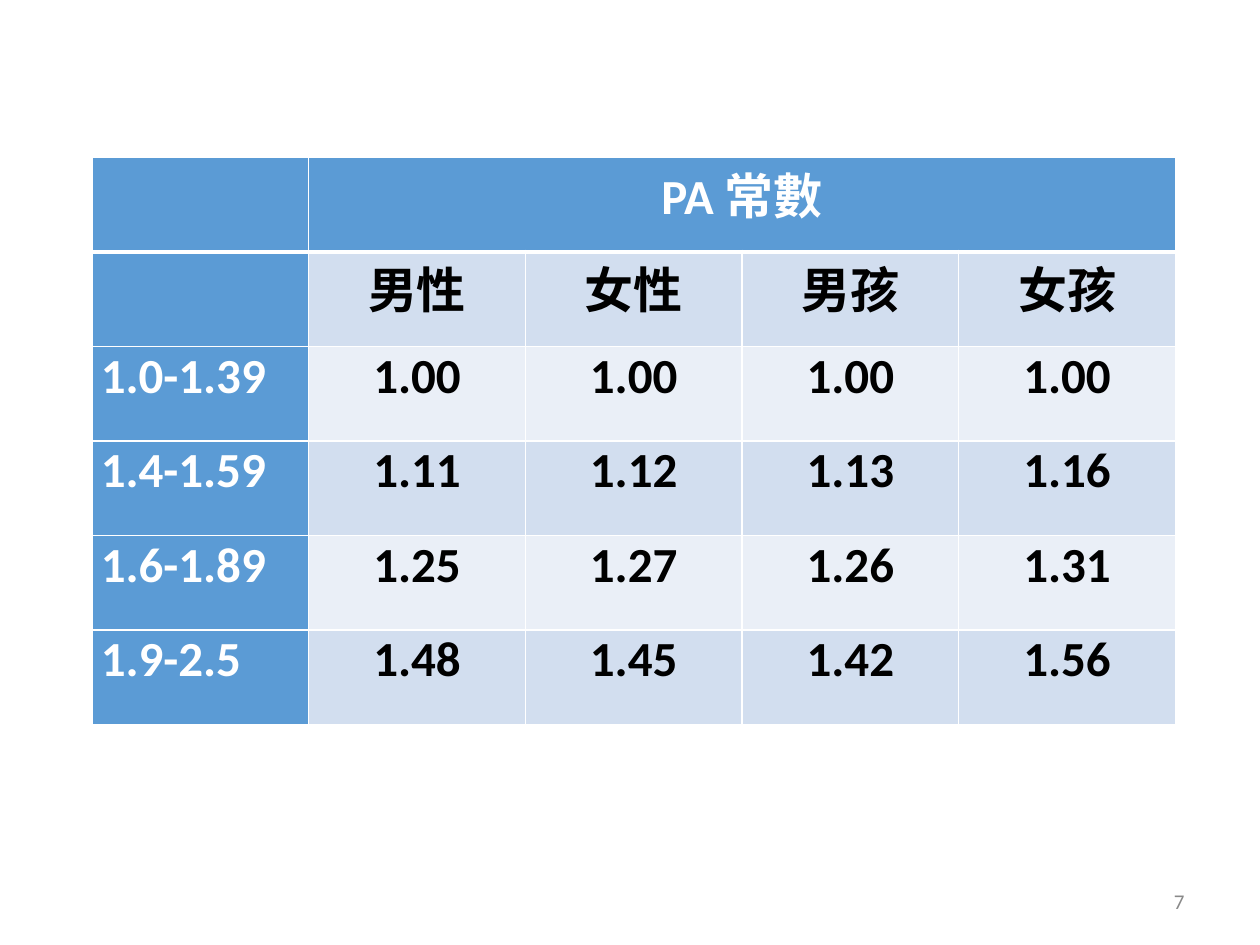
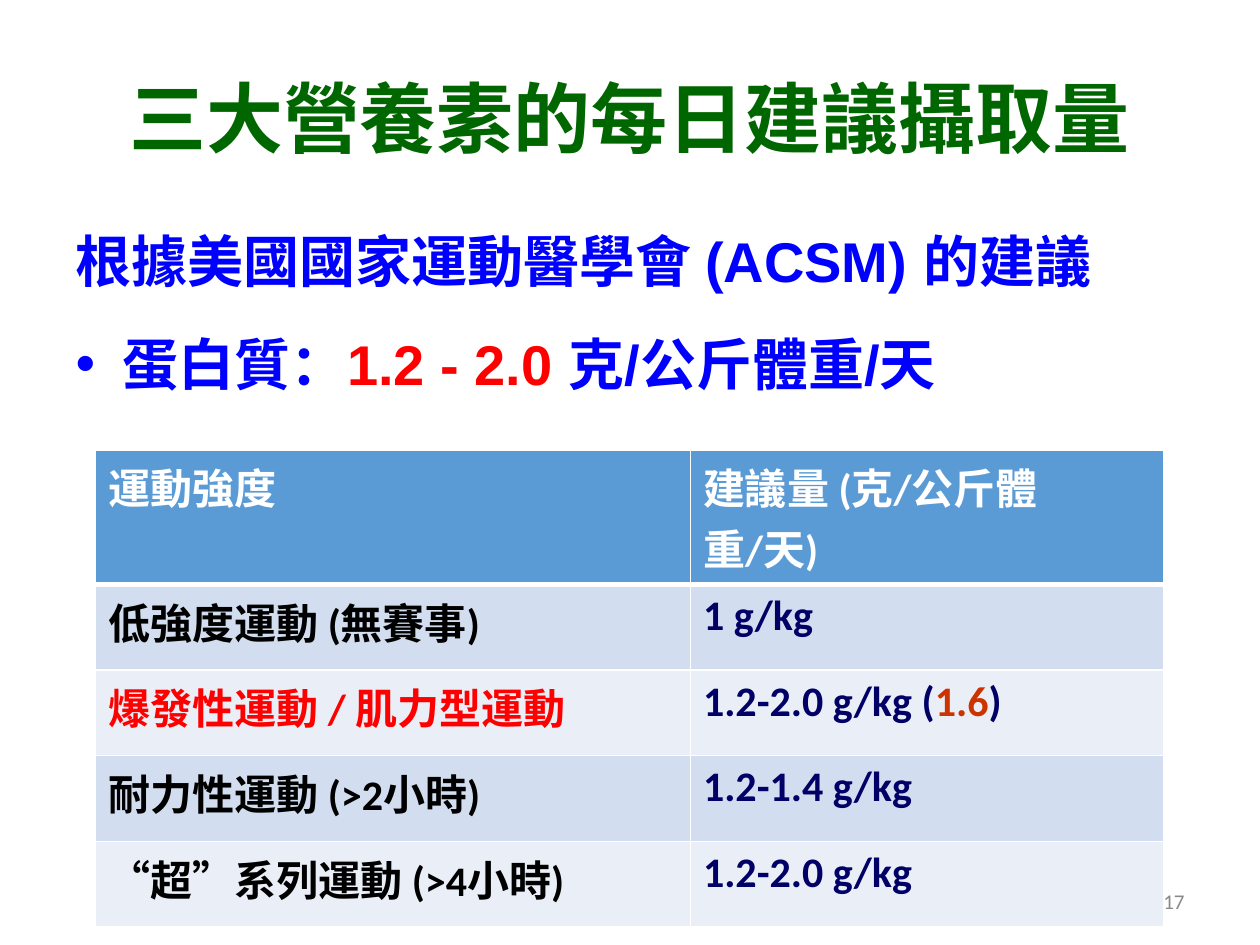
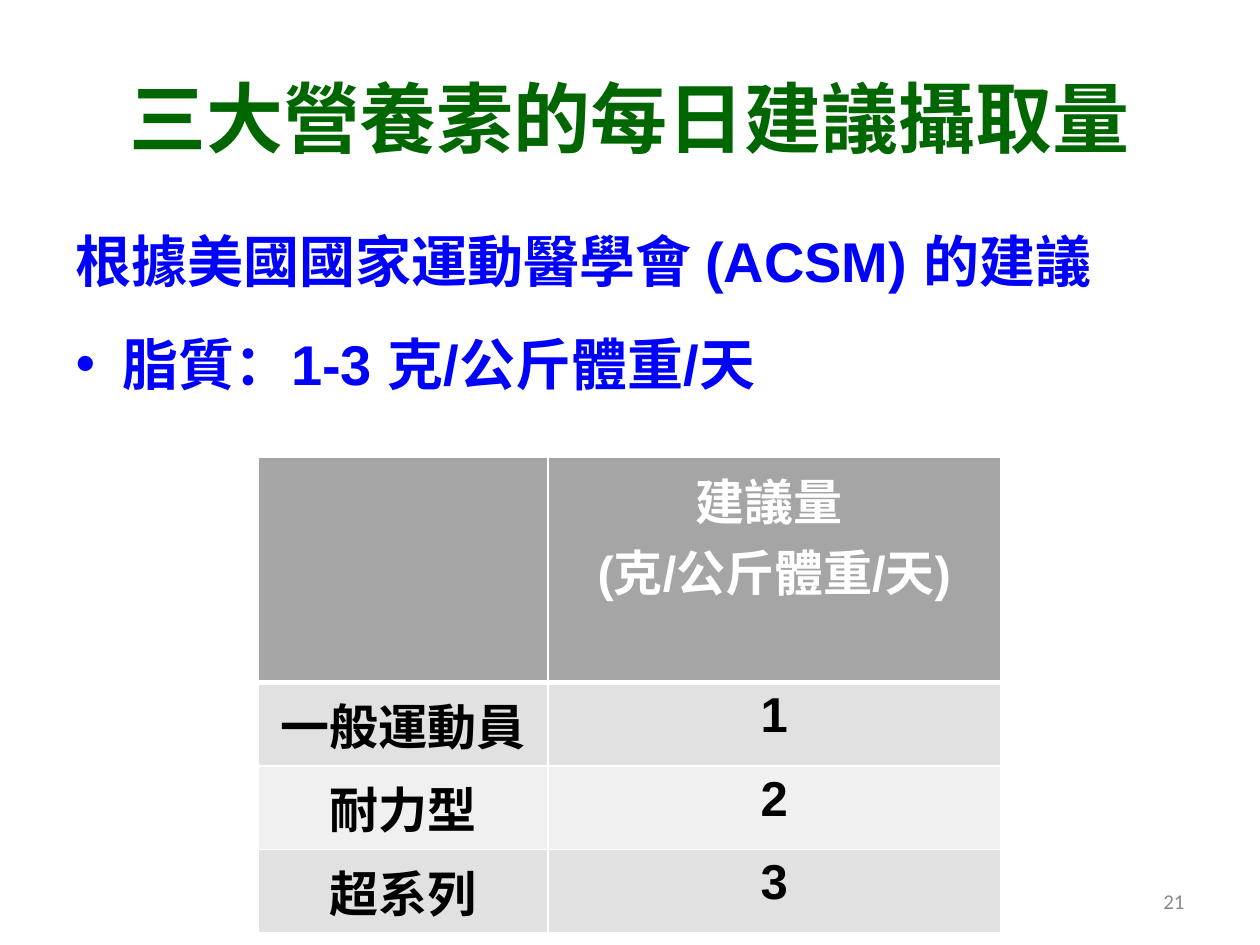
from dataclasses import dataclass, replace

from lxml import etree
from pptx import Presentation
from pptx.dml.color import RGBColor
from pptx.enum.text import MSO_ANCHOR, MSO_AUTO_SIZE, PP_ALIGN
from pptx.oxml.ns import qn
from pptx.util import Inches, Pt

LEFT, CENTER, RIGHT = PP_ALIGN.LEFT, PP_ALIGN.CENTER, PP_ALIGN.RIGHT
TOP, MIDDLE = MSO_ANCHOR.TOP, MSO_ANCHOR.MIDDLE
NO_FIT = MSO_AUTO_SIZE.NONE
CONTENT_LAYOUT, BLANK_LAYOUT = 1, 6


@dataclass(frozen=True)
class Theme:
    """Colours, fonts and type sizes of the deck."""
    white: str = "FFFFFF"
    black: str = "000000"
    green: str = "006600"
    blue: str = "0000FF"
    red: str = "FF0000"
    navy: str = "000066"
    rust: str = "CC3300"
    grey: str = "898989"
    blue_bands: tuple = ("5B9BD5", "D2DEEF", "EAEFF7")
    grey_bands: tuple = ("A5A5A5", "E1E1E1", "F0F0F0")
    cjk: str = "Noto Sans CJK SC"
    latin: str = "Calibri"
    body_font: str = "Arial"
    title_size: int = 44
    body_size: int = 32
    large_cell: int = 28
    small_cell: int = 24
    number_size: int = 12


THEME = Theme()


@dataclass(frozen=True)
class TextStyle:
    """Look of one piece of text."""
    size: int
    font: str
    color: str
    align: int = LEFT
    bold: bool = True


TITLE = TextStyle(THEME.title_size, THEME.cjk, THEME.green, CENTER)
BODY = TextStyle(THEME.body_size, THEME.body_font, THEME.blue)
NUMBER = TextStyle(THEME.number_size, THEME.latin, THEME.grey, RIGHT, False)
PA_CELL = TextStyle(THEME.large_cell, THEME.latin, THEME.black, CENTER)
PROTEIN_CELL = TextStyle(THEME.small_cell, THEME.latin, THEME.black)
FAT_CELL = TextStyle(THEME.large_cell, THEME.body_font, THEME.black, CENTER)

TITLE_TEXT = "三大營養素的每日建議攝取量"
SOURCE_TEXT = "根據美國國家運動醫學會 (ACSM) 的建議"

PA_ROWS = [
    ["", "PA 常數", "", "", ""],
    ["", "男性", "女性", "男孩", "女孩"],
    ["1.0-1.39", "1.00", "1.00", "1.00", "1.00"],
    ["1.4-1.59", "1.11", "1.12", "1.13", "1.16"],
    ["1.6-1.89", "1.25", "1.27", "1.26", "1.31"],
    ["1.9-2.5", "1.48", "1.45", "1.42", "1.56"],
]
PROTEIN_ROWS = [
    ["運動強度", "建議量 (克/公斤體重/天)"],
    ["低強度運動 (無賽事)", "1 g/kg"],
    ["爆發性運動 / 肌力型運動", "1.2-2.0 g/kg (1.6)"],
    ["耐力性運動 (>2小時)", "1.2-1.4 g/kg"],
    ["“超”系列運動 (>4小時)", "1.2-2.0 g/kg"],
]
FAT_ROWS = [
    ["", "建議量 \n(克/公斤體重/天)"],
    ["一般運動員", "1"],
    ["耐力型", "2"],
    ["超系列", "3"],
]


def style_run(run, style):
    """Format a run, giving East Asian text its own font."""
    font = run.font
    font.size, font.bold, font.name = Pt(style.size), style.bold, style.font
    font.color.rgb = RGBColor.from_string(style.color)
    run._r.get_or_add_rPr().find(qn("a:latin")).addnext(
        etree.Element(qn("a:ea"), typeface=THEME.cjk))


def write(frame, text, style, accent="", accent_color=None):
    """Write text into a frame, recolouring the accent where it occurs."""
    frame.text = text
    for paragraph in frame.paragraphs:
        paragraph.alignment = style.align
        if accent and accent in paragraph.text:
            pieces = paragraph.text.partition(accent)
            paragraph.text = pieces[0]
            for piece in filter(None, pieces[1:]):
                paragraph.add_run().text = piece
        for run in paragraph.runs:
            color = accent_color if run.text == accent else style.color
            style_run(run, replace(style, color=color))


def place(shape, left, top, width, height):
    """Move and size a shape, in inches."""
    shape.left, shape.top = Inches(left), Inches(top)
    shape.width, shape.height = Inches(width), Inches(height)


def prepare_frame(shape, anchor):
    """Return the wrapping, fixed-size text frame of a shape."""
    frame = shape.text_frame
    frame.word_wrap, frame.auto_size = True, NO_FIT
    frame.vertical_anchor = anchor
    return frame


def add_number(slide, number):
    """Add the page number at the lower right."""
    box = slide.shapes.add_textbox(
        Inches(7.17), Inches(6.95), Inches(2.33), Inches(0.4))
    write(prepare_frame(box, MIDDLE), str(number), NUMBER)


def add_nutrient_slide(deck, advice, number, accent=""):
    """Add a slide with the shared title, the source line and one advice."""
    slide = deck.slides.add_slide(deck.slide_layouts[CONTENT_LAYOUT])
    title, body = slide.shapes.title, slide.placeholders[1]
    place(title, 0.5, 0.3, 9, 1.25)
    write(prepare_frame(title, MIDDLE), TITLE_TEXT, TITLE)
    place(body, 0.5, 1.75, 9, 4.95)
    frame = prepare_frame(body, TOP)
    write(frame, f"{SOURCE_TEXT}\n{advice}", BODY, accent, THEME.red)
    source, bullet = frame.paragraphs
    source.space_before, bullet.space_before = Pt(0), Pt(20)
    properties = source._p.get_or_add_pPr()
    properties.set("marL", "0")
    properties.set("indent", "0")
    etree.SubElement(properties, qn("a:buNone"))
    add_number(slide, number)
    return slide


def set_borders(cell, row):
    """Draw white cell borders, thick under the header row."""
    properties = cell._tc.get_or_add_tcPr()
    widths = {"lnL": 1, "lnR": 1, "lnT": 3 if row == 1 else 1,
              "lnB": 3 if row == 0 else 1}
    for side, width in widths.items():
        line = etree.SubElement(properties, qn(f"a:{side}"), w=str(Pt(width)))
        fill = etree.SubElement(line, qn("a:solidFill"))
        etree.SubElement(fill, qn("a:srgbClr"), val=THEME.white)


def add_table(slide, rows, left, top, widths, row_height, bands, style,
              header_column=False):
    """Add a banded table and return it."""
    table = slide.shapes.add_table(
        len(rows), len(widths), Inches(left), Inches(top),
        Inches(sum(widths)), Inches(row_height * len(rows))).table
    table.horz_banding = False
    for column, width in zip(table.columns, widths):
        column.width = Inches(width)
    header, odd, even = bands
    for r, texts in enumerate(rows):
        table.rows[r].height = Inches(row_height)
        for c, text in enumerate(texts):
            cell = table.cell(r, c)
            is_header = r == 0 or (header_column and c == 0)
            set_borders(cell, r)
            cell.fill.solid()
            cell.fill.fore_color.rgb = RGBColor.from_string(
                header if is_header else odd if r % 2 else even)
            color = THEME.white if is_header else style.color
            write(cell.text_frame, text, replace(style, color=color))
    return table


def add_pa_slide(deck):
    """Add the table of activity constants."""
    slide = deck.slides.add_slide(deck.slide_layouts[BLANK_LAYOUT])
    constants = add_table(slide, PA_ROWS, 0.73, 1.25, [1.72] * 5, 0.75,
                          THEME.blue_bands, PA_CELL, header_column=True)
    constants.cell(0, 1).merge(constants.cell(0, 4))
    for cell in constants.iter_cells():
        cell.margin_left = cell.margin_right = Inches(0.07)
        cell.margin_top = cell.margin_bottom = Inches(0)
    for r in range(2, len(PA_ROWS)):
        constants.cell(r, 0).text_frame.paragraphs[0].alignment = LEFT
    add_number(slide, 7)


def add_protein_slide(deck):
    """Add the protein advice by exercise intensity."""
    slide = add_nutrient_slide(
        deck, "蛋白質：1.2 - 2.0 克/公斤體重/天", 17, "1.2 - 2.0 ")
    intake = add_table(slide, PROTEIN_ROWS, 0.76, 3.57, [4.72, 3.76], 0.68,
                       THEME.blue_bands, PROTEIN_CELL)
    amount = replace(PROTEIN_CELL, color=THEME.navy)
    for r, (_, text) in enumerate(PROTEIN_ROWS[1:], 1):
        write(intake.cell(r, 1).text_frame, text, amount, "1.6", THEME.rust)
    write(intake.cell(2, 0).text_frame, PROTEIN_ROWS[2][0],
          replace(PROTEIN_CELL, color=THEME.red))


def add_fat_slide(deck):
    """Add the fat advice by kind of athlete."""
    slide = add_nutrient_slide(deck, "脂質：1-3 克/公斤體重/天", 21)
    add_table(slide, FAT_ROWS, 2.05, 3.63, [2.3, 3.59], 0.56,
              THEME.grey_bands, FAT_CELL)


def main():
    """Build and save the deck."""
    deck = Presentation()
    deck.slide_width, deck.slide_height = Inches(10), Inches(7.5)
    add_pa_slide(deck)
    add_protein_slide(deck)
    add_fat_slide(deck)
    deck.save("out.pptx")


if __name__ == "__main__":
    main()
